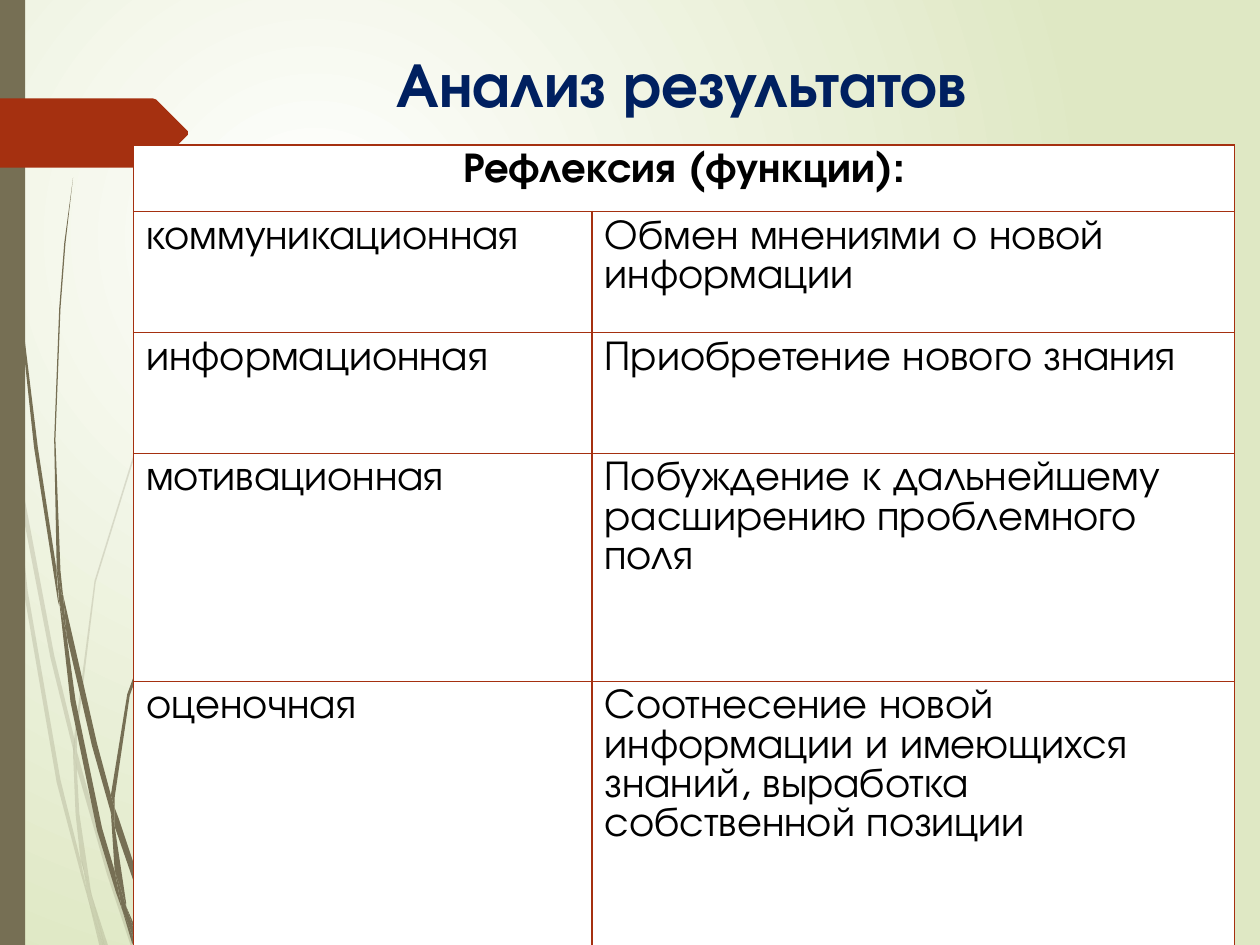
from dataclasses import dataclass

from lxml import etree
from pptx import Presentation
from pptx.dml.color import RGBColor
from pptx.enum.shapes import MSO_SHAPE
from pptx.enum.text import MSO_ANCHOR, PP_ALIGN
from pptx.oxml import parse_xml
from pptx.oxml.ns import qn
from pptx.util import Inches, Pt

RECT = MSO_SHAPE.RECTANGLE
TOP = MSO_ANCHOR.TOP
LEFT, CENTER = PP_ALIGN.LEFT, PP_ALIGN.CENTER
NS = "http://schemas.openxmlformats.org/drawingml/2006/main"
PNS = "http://schemas.openxmlformats.org/presentationml/2006/main"


@dataclass(frozen=True)
class Theme:
    """Hold the colours, font and type sizes."""
    font: str = "TeX Gyre Adventor"
    navy: str = "002060"
    black: str = "000000"
    white: str = "FFFFFF"
    pale: str = "DFE8C4"
    olive: str = "766F54"
    rust: str = "A53010"
    head: int = 36
    body: int = 24


THEME = Theme()

FAINT = [
    (0.08, 3.5, 0.06, 3.22, 0, 2.82, 0, 2.99, 0.07, 3.44),
    (0.4, 5.22, 0.59, 5.99, 0.59, 5.86, 0.43, 5.2, 0.1, 3.45, 0.12, 3.76),
    (0.64, 6.07, 0.61, 5.96, 0.61, 6.1, 0.85, 6.94, 1.04, 7.51, 1.08, 7.51,
     0.88, 6.92),
    (0.83, 7.51, 0.86, 7.51, 0.73, 7.11),
    (0.64, 6.83, 0.48, 6.19, 0.22, 4.69, 0.12, 3.76, 0.08, 3.5, 0.19, 4.7,
     0.45, 6.21, 0.64, 6.93, 0.7, 7.14, 0.69, 7.07),
    (0.58, 5.99, 0.6, 6.46, 0.64, 6.83, 0.67, 6.92, 0.73, 7.11, 0.72, 7.06,
     0.63, 6.46, 0.61, 6.1, 0.61, 6.08),
    (0.61, 5.84, 0.76, 4.62, 1.11, 3.49, 1.59, 2.45, 1.87, 1.98, 2.01, 1.75,
     2.17, 1.54, 2.17, 1.53, 2.01, 1.75, 1.86, 1.97, 1.58, 2.44, 1.1, 3.48,
     0.75, 4.61, 0.59, 5.84, 0.59, 5.86, 0.61, 5.96),
    (0.7, 7.14, 0.79, 7.51, 0.82, 7.51),
    (0.61, 6.08, 0.61, 6.1, 0.61, 5.96, 0.59, 5.86, 0.58, 5.99),
    (0.67, 6.92, 0.65, 6.83, 0.69, 7.07, 0.7, 7.14, 0.82, 7.51, 0.83, 7.51,
     0.73, 7.11),
]
DARK = [
    (0.05, 1.1, 0.14, 2.33, 0.27, 3.55, 0.46, 4.77, 0.47, 4.81, 0.45, 4.57,
     0.45, 4.53, 0.3, 3.55, 0.15, 2.32, 0.06, 1.09, 0.04, 0.48, 0.03, 0,
     0.02, 0, 0.03, 0.48),
    (0.73, 5.92, 0.88, 6.45, 0.88, 6.33, 0.88, 6.31, 0.77, 5.9, 0.5, 4.72,
     0.53, 5.05),
    (0.94, 6.49, 0.91, 6.41, 0.91, 6.56, 1.09, 7.08, 1.26, 7.49, 1.3, 7.49,
     1.13, 7.06),
    (0.91, 6.91, 0.81, 6.57, 0.6, 5.56, 0.53, 5.05, 0.47, 4.77, 0.56, 5.57,
     0.77, 6.59, 0.92, 7.08, 0.97, 7.22, 0.96, 7.17),
    (0.5, 4.72, 0.48, 4.53, 0.44, 3.49, 0.48, 2.45, 0.52, 1.93, 0.58, 1.41,
     0.51, 1.93, 0.47, 2.45, 0.43, 3.49, 0.45, 4.49, 0.49, 4.72),
    (1.1, 7.49, 1.13, 7.49, 1, 7.19),
    (0.47, 4.77, 0.53, 5.05, 0.5, 4.72, 0.49, 4.72, 0.45, 4.49, 0.45, 4.53),
    (0.91, 6.33, 1.03, 5.52, 1.31, 4.76, 1.69, 4.06, 1.91, 3.74, 2.03, 3.59,
     2.16, 3.44, 2.15, 3.44, 2.03, 3.58, 1.91, 3.73, 1.68, 4.05, 1.29, 4.74,
     1.01, 5.51, 0.88, 6.31, 0.91, 6.41),
    (0.97, 7.22, 1.05, 7.49, 1.08, 7.49),
    (0.88, 6.45, 0.91, 6.91, 0.96, 7.06, 1, 7.19, 1, 7.16, 0.91, 6.56,
     0.9, 6.51),
    (0.88, 6.45, 0.9, 6.51, 0.91, 6.56, 0.91, 6.41, 0.88, 6.31, 0.88, 6.33),
    (0.96, 7.06, 0.91, 6.91, 0.96, 7.17, 0.97, 7.22, 1.08, 7.49, 1.1, 7.49,
     1, 7.19),
]
FLAG = (1.49, 1.07, 1.24, 1.32, 1.21, 1.33, 0, 1.33, 0, 0.78, 1.21, 0.78,
        1.24, 0.79, 1.49, 1.04)
ROWS = [
    ("коммуникационная", "Обмен мнениями о новой информации"),
    ("информационная", "Приобретение нового знания"),
    ("мотивационная", "Побуждение к дальнейшему расширению проблемного поля"),
    ("оценочная", "Соотнесение новой информации и имеющихся знаний, "
                  "выработка собственной позиции"),
]
WIDTHS = (3.64, 5.1)
HEIGHTS = (0.53, 0.96, 0.96, 1.81, 2.24)


def set_back(slide):
    """Fill the slide with a round gradient."""
    stops = "".join(
        f'<a:gs pos="{pos}"><a:srgbClr val="{tone}"/></a:gs>'
        for pos, tone in ((0, THEME.white), (100000, THEME.pale)))
    back = parse_xml(
        f'<p:bg xmlns:p="{PNS}" xmlns:a="{NS}"><p:bgPr>'
        f'<a:gradFill rotWithShape="1"><a:gsLst>{stops}</a:gsLst>'
        '<a:path path="circle"><a:fillToRect l="50000" t="50000" '
        'r="100000" b="100000"/></a:path></a:gradFill><a:effectLst/>'
        '</p:bgPr></p:bg>')
    slide.element.cSld.insert(0, back)


def paint(shape, tone, alpha=None):
    """Give a shape a plain fill without line or shadow."""
    shape.shadow.inherit = False
    shape.fill.solid()
    shape.fill.fore_color.rgb = RGBColor.from_string(tone)
    shape.line.fill.background()
    if alpha:
        clr = shape.element.spPr.find(f"{qn('a:solidFill')}/{qn('a:srgbClr')}")
        etree.SubElement(clr, qn("a:alpha"), val=str(alpha * 1000))


def add_free(shapes, flat, tone, alpha=None):
    """Draw a closed outline from a flat list of x and y."""
    spots = [(Inches(x), Inches(y)) for x, y in zip(flat[::2], flat[1::2])]
    form = shapes.build_freeform(*spots[0])
    form.add_line_segments(spots[1:], close=True)
    paint(form.convert_to_shape(), tone, alpha)


def add_grass(slide, blades, alpha=None):
    """Group a tuft of grass blades."""
    tuft = slide.shapes.add_group_shape()
    for blade in blades:
        add_free(tuft.shapes, blade, THEME.olive, alpha)


def write(frame, text, tone, align=LEFT, **fmt):
    """Write one formatted paragraph into a text frame."""
    frame.word_wrap = True
    para = frame.paragraphs[0]
    para.alignment = align
    run = para.add_run()
    run.text = text
    for name, value in {"name": THEME.font, **fmt}.items():
        setattr(run.font, name, value)
    run.font.color.rgb = RGBColor.from_string(tone)


def add_title(slide, text):
    """Place the slide heading."""
    box = slide.shapes.add_textbox(
        Inches(1.46), Inches(0.3), Inches(8.04), Inches(1.25))
    box.text_frame.vertical_anchor = TOP
    write(box.text_frame, text, THEME.navy, CENTER,
          size=Pt(THEME.head), bold=True)


def edge(cell):
    """Fill a cell and rule its four sides."""
    props = cell._tc.get_or_add_tcPr()
    for side in ("lnL", "lnR", "lnT", "lnB"):
        line = etree.SubElement(props, qn(f"a:{side}"), w=str(Pt(1)))
        fill = etree.SubElement(line, qn("a:solidFill"))
        etree.SubElement(fill, qn("a:srgbClr"), val=THEME.rust)
    cell.fill.solid()
    cell.fill.fore_color.rgb = RGBColor.from_string(THEME.white)


def add_grid(slide, head, rows):
    """Build the table with a merged heading row."""
    grid = slide.shapes.add_table(
        len(HEIGHTS), len(WIDTHS), Inches(1.06), Inches(1.15),
        Inches(sum(WIDTHS)), Inches(sum(HEIGHTS))).table
    for col, width in zip(grid.columns, WIDTHS):
        col.width = Inches(width)
    for row, height in zip(grid.rows, HEIGHTS):
        row.height = Inches(height)
    for cell in grid.iter_cells():
        edge(cell)
    first = grid.cell(0, 0)
    first.merge(grid.cell(0, 1))
    size = Pt(THEME.body)
    write(first.text_frame, head, THEME.black, CENTER, size=size, bold=True)
    for i, row in enumerate(rows, 1):
        for j, text in enumerate(row):
            write(grid.cell(i, j).text_frame, text, THEME.black,
                  size=size, bold=False)


def main():
    """Build and save the slide."""
    deck = Presentation()
    deck.slide_width, deck.slide_height = Inches(10), Inches(7.5)
    slide = deck.slides.add_slide(deck.slide_layouts[6])
    set_back(slide)
    add_grass(slide, FAINT, 20)
    add_grass(slide, DARK)
    bar = slide.shapes.add_shape(RECT, 0, 0, Inches(0.2), Inches(7.5))
    paint(bar, THEME.olive)
    add_free(slide.shapes, FLAG, THEME.rust)
    add_title(slide, "Анализ результатов ")
    add_grid(slide, "Рефлексия (функции):", ROWS)
    deck.save("out.pptx")


if __name__ == "__main__":
    main()
